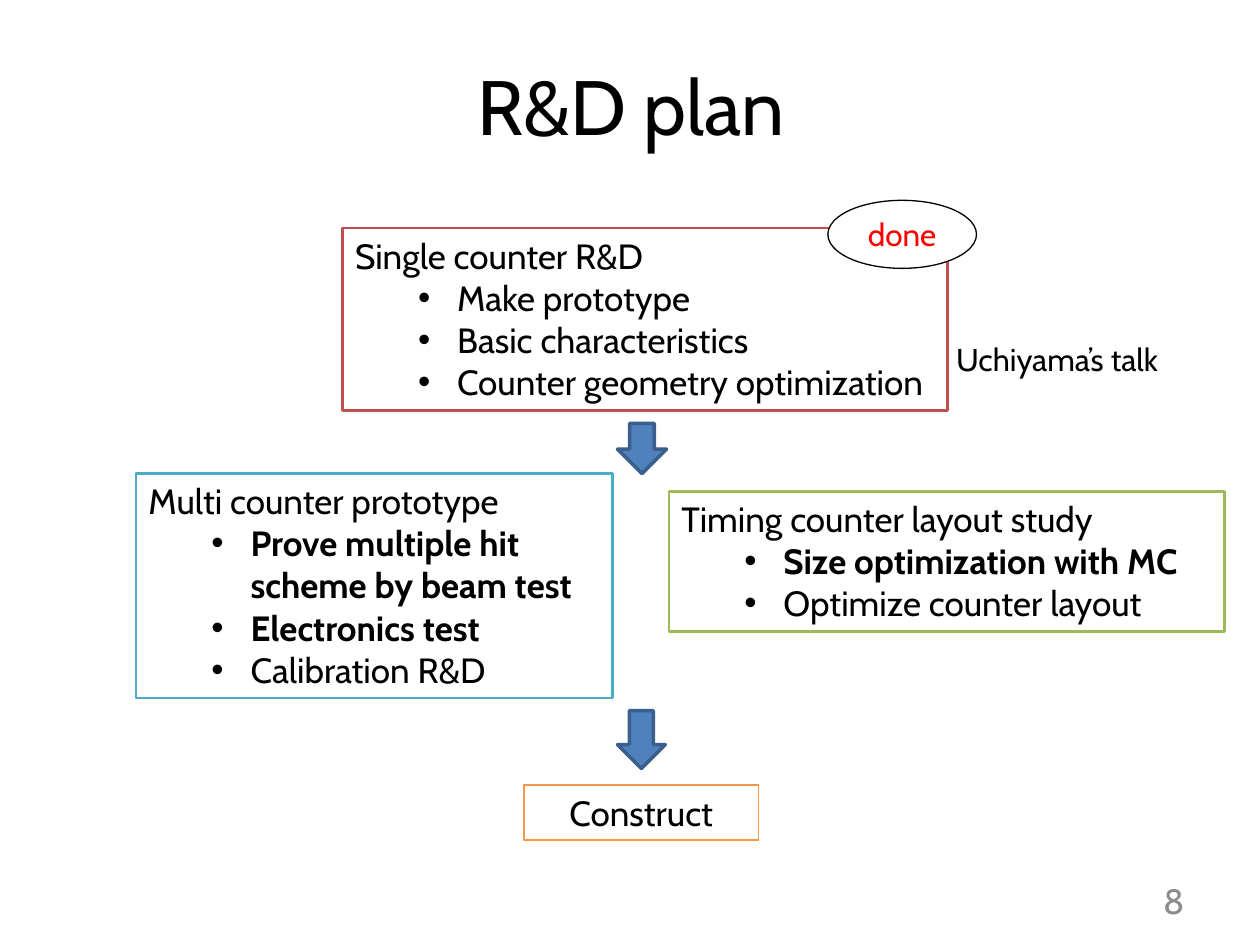
from pptx import Presentation
from pptx.dml.color import RGBColor
from pptx.enum.shapes import MSO_SHAPE
from pptx.enum.text import MSO_ANCHOR, MSO_AUTO_SIZE, PP_ALIGN
from pptx.oxml.ns import qn
from pptx.util import Pt
from lxml.etree import SubElement

PX = 9144  # EMU per px, 100 px to the inch
BLACK, WHITE, RED, GRAY = "000000", "FFFFFF", "FF0000", "8C8C8C"
BLUE, DARK_BLUE = "4F81BD", "3A5F8C"


def rgb(color):
    return RGBColor.from_string(color)


class PlanSlide:
    font = "Cabin"
    hanging, indent = 31, 81

    def __init__(self, slide):
        self.slide = slide

    def add_text(self, paragraph, text, size=20, color=BLACK, bold=False, align=PP_ALIGN.LEFT):
        paragraph.alignment = align
        run = paragraph.add_run()
        run.text = text
        run.font.name = self.font
        run.font.size = Pt(size)
        run.font.bold = bold
        run.font.color.rgb = rgb(color)

    def bullet(self, paragraph):
        paragraph.level = 1
        properties = paragraph._p.get_or_add_pPr()
        properties.set("marL", str(self.indent * PX))
        properties.set("indent", str(-self.hanging * PX))
        SubElement(properties, qn("a:buFont")).set("typeface", "Arial")
        SubElement(properties, qn("a:buChar")).set("char", "•")

    def title(self, text, box):
        title = self.slide.shapes.title
        title.left, title.top, title.width, title.height = (n * PX for n in box)
        title.text_frame.vertical_anchor = MSO_ANCHOR.MIDDLE
        self.add_text(title.text_frame.paragraphs[0], text, 44, align=PP_ALIGN.CENTER)

    def label(self, text, box, anchor=MSO_ANCHOR.TOP, **style):
        frame = self.slide.shapes.add_textbox(*(n * PX for n in box)).text_frame
        frame.word_wrap = True
        frame.vertical_anchor = anchor
        self.add_text(frame.paragraphs[0], text, **style)

    def shape(self, kind, box, line, width, fill=None):
        shape = self.slide.shapes.add_shape(kind, *(n * PX for n in box))
        shape.shadow.inherit = False
        shape.line.color.rgb = rgb(line)
        shape.line.width = Pt(width)
        if fill:
            shape.fill.solid()
            shape.fill.fore_color.rgb = rgb(fill)
        else:
            shape.fill.background()
        return shape

    def step(self, heading, box, line, tasks=(), width=1.5, align=PP_ALIGN.LEFT):
        """Outlined box with a heading and (task, bold) bullets."""
        frame = self.shape(MSO_SHAPE.RECTANGLE, box, line, width).text_frame
        frame.word_wrap = True
        frame.auto_size = MSO_AUTO_SIZE.SHAPE_TO_FIT_TEXT
        frame.vertical_anchor = MSO_ANCHOR.TOP
        self.add_text(frame.paragraphs[0], heading, align=align)
        for task, bold in tasks:
            paragraph = frame.add_paragraph()
            self.bullet(paragraph)
            self.add_text(paragraph, task, bold=bold)

    def arrow(self, box):
        self.shape(MSO_SHAPE.DOWN_ARROW, box, DARK_BLUE, 2, BLUE)

    def badge(self, text, box):
        frame = self.shape(MSO_SHAPE.OVAL, box, BLACK, 0.75, WHITE).text_frame
        frame.vertical_anchor = MSO_ANCHOR.MIDDLE
        self.add_text(frame.paragraphs[0], text, 18, RED, align=PP_ALIGN.CENTER)


def main():
    deck = Presentation()
    deck.slide_width, deck.slide_height = 1000 * PX, 750 * PX
    plan = PlanSlide(deck.slides.add_slide(deck.slide_layouts[5]))

    plan.title("R&D plan", (51, 21, 900, 125))
    plan.step("Single counter R&D", (272, 181, 480, 145), "C0504D", [
        ("Make prototype", False),
        ("Basic characteristics", False),
        ("Counter geometry optimization", False),
    ])
    plan.step("Timing counter layout study", (531, 390, 441, 111), "9BBB59", [
        ("Size optimization with MC", True),
        ("Optimize counter layout", False),
    ])
    plan.step("Multi counter prototype", (108, 376, 378, 178), "4BACC6", [
        ("Prove multiple hit scheme by beam test", True),
        ("Electronics test", True),
        ("Calibration R&D", False),
    ])
    plan.step("Construct", (416, 623, 186, 44), "F79646", width=1, align=PP_ALIGN.CENTER)
    plan.label("Uchiyama’s talk", (749, 265, 197, 40), size=18)
    plan.arrow((490, 336, 39, 40))
    plan.arrow((490, 564, 38, 46))
    plan.label("8", (717, 695, 233, 40), MSO_ANCHOR.MIDDLE, color=GRAY, align=PP_ALIGN.RIGHT)
    plan.badge("done", (657, 159, 118, 54))

    deck.save("out.pptx")


if __name__ == "__main__":
    main()
